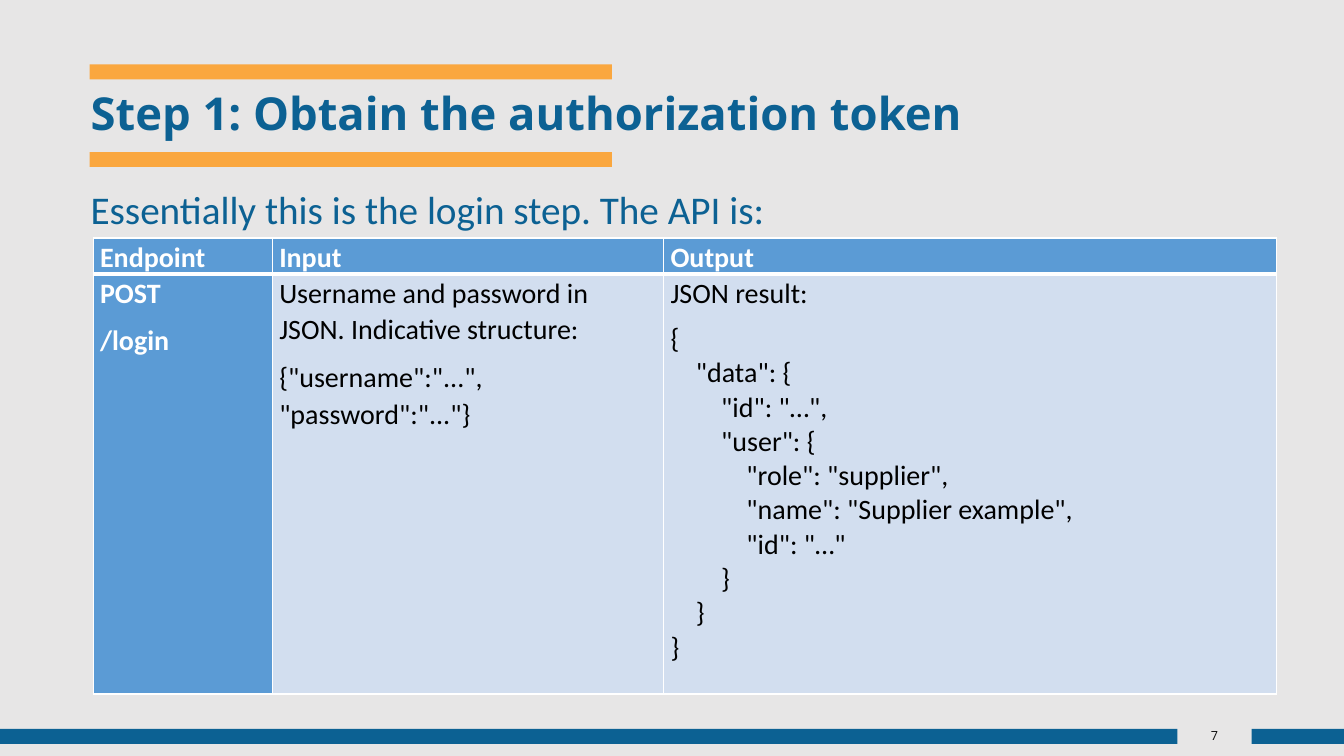
from dataclasses import dataclass

from lxml import etree
from pptx import Presentation
from pptx.dml.color import RGBColor
from pptx.enum.shapes import MSO_SHAPE
from pptx.enum.text import MSO_ANCHOR, PP_ALIGN
from pptx.oxml.ns import qn
from pptx.slide import Slide
from pptx.table import _Cell
from pptx.text.text import TextFrame, _Paragraph
from pptx.util import Pt

RECTANGLE = MSO_SHAPE.RECTANGLE
MIDDLE = MSO_ANCHOR.MIDDLE
TOP = MSO_ANCHOR.TOP
LEFT = PP_ALIGN.LEFT
CENTER = PP_ALIGN.CENTER


@dataclass(frozen=True)
class Theme:
    background: str = "E7E6E6"
    accent: str = "FAA73F"
    primary: str = "0C6193"
    header: str = "5B9BD5"
    body: str = "D2DEEF"
    white: str = "FFFFFF"
    black: str = "000000"
    number: str = "0D0D0D"
    heading_font: str = "Open Sans"
    text_font: str = "Calibri"
    title_size: float = 32.4
    intro_size: float = 28
    table_size: float = 20
    number_size: float = 9


@dataclass(frozen=True)
class Box:
    left: float
    top: float
    width: float
    height: float

    def lengths(self) -> tuple[Pt, Pt, Pt, Pt]:
        return Pt(self.left), Pt(self.top), Pt(self.width), Pt(self.height)


@dataclass(frozen=True)
class Style:
    font: str
    size: float
    color: str
    bold: bool = False


@dataclass(frozen=True)
class Bar:
    box: Box
    color: str


@dataclass(frozen=True)
class Line:
    text: str
    code: bool = False
    level: int = 0


@dataclass(frozen=True)
class CellContent:
    lines: tuple[Line, ...]
    emphasized: bool = False


THEME = Theme()
BAR_HEIGHT = 10.7
INDENT = 18.08

BARS = (
    Bar(Box(64, 46, 373, BAR_HEIGHT), THEME.accent),
    Bar(Box(64, 108.6, 373, BAR_HEIGHT), THEME.accent),
    Bar(Box(0, 520.6, 841, BAR_HEIGHT), THEME.primary),
    Bar(Box(894, 520.6, 66, BAR_HEIGHT), THEME.primary),
)

COLUMN_WIDTHS = (128, 279.5, 438)
ROW_HEIGHTS = (25, 300)
API_ROWS = (
    tuple(CellContent((Line(label),), True) for label in ("Endpoint", "Input", "Output")),
    (
        CellContent((Line("POST"), Line("/login")), True),
        CellContent((
            Line("Username and password in JSON. Indicative structure:"),
            Line('{"username":"...", "password":"..."}'),
        )),
        CellContent((
            Line("JSON result:"),
            Line("{", True),
            Line('"data": {', True, 1),
            Line('"id": "…",', True, 2),
            Line('"user": {', True, 2),
            Line('"role": "supplier",', True, 3),
            Line('"name": "Supplier example",', True, 3),
            Line('"id": "…"', True, 3),
            Line("}", True, 2),
            Line("}", True, 1),
            Line("}", True),
        )),
    ),
)


def rgb(color: str) -> RGBColor:
    return RGBColor.from_string(color)


def format_runs(paragraph: _Paragraph, style: Style) -> None:
    for run in paragraph.runs:
        run.font.name = style.font
        run.font.size = Pt(style.size)
        run.font.bold = style.bold
        run.font.color.rgb = rgb(style.color)


def write_line(frame: TextFrame, text: str, style: Style, align: PP_ALIGN) -> _Paragraph:
    frame.word_wrap = True
    frame.text = text
    paragraph = frame.paragraphs[0]
    paragraph.alignment = align
    format_runs(paragraph, style)
    return paragraph


def draw_bar(slide: Slide, bar: Bar) -> None:
    rectangle = slide.shapes.add_shape(RECTANGLE, *bar.box.lengths())
    rectangle.shadow.inherit = False
    rectangle.fill.solid()
    rectangle.fill.fore_color.rgb = rgb(bar.color)
    rectangle.line.fill.background()


def draw_title(slide: Slide, text: str, box: Box) -> None:
    title = slide.shapes.title
    title.left, title.top, title.width, title.height = box.lengths()
    title.text_frame.vertical_anchor = MIDDLE
    style = Style(THEME.heading_font, THEME.title_size, THEME.primary, True)
    write_line(title.text_frame, text, style, LEFT).line_spacing = 0.9


def draw_text(slide: Slide, text: str, box: Box, style: Style,
              align: PP_ALIGN, anchor: MSO_ANCHOR) -> None:
    frame = slide.shapes.add_textbox(*box.lengths()).text_frame
    frame.vertical_anchor = anchor
    write_line(frame, text, style, align)


def border_cell(cell: _Cell, bottom_width: float) -> None:
    properties = cell._tc.get_or_add_tcPr()
    for side, width in (("L", 1), ("R", 1), ("T", 1), ("B", bottom_width)):
        border = etree.SubElement(properties, qn(f"a:ln{side}"), w=str(Pt(width)))
        solid = etree.SubElement(border, qn("a:solidFill"))
        etree.SubElement(solid, qn("a:srgbClr"), val=THEME.white)


def fill_cell(cell: _Cell, content: CellContent, bottom_width: float) -> None:
    border_cell(cell, bottom_width)
    cell.fill.solid()
    cell.fill.fore_color.rgb = rgb(THEME.header if content.emphasized else THEME.body)
    cell.margin_left = cell.margin_right = Pt(5)
    cell.margin_top = cell.margin_bottom = Pt(0)
    color = THEME.white if content.emphasized else THEME.black
    style = Style(THEME.text_font, THEME.table_size, color, content.emphasized)
    cell.text_frame.text = "\n".join(line.text for line in content.lines)
    for paragraph, line in zip(cell.text_frame.paragraphs, content.lines):
        format_runs(paragraph, style)
        paragraph.line_spacing = 1.0 if line.code else 1.07
        paragraph.space_after = Pt(0 if line.code else 8)
        if line.level:
            paragraph._p.get_or_add_pPr().set("marL", str(Pt(INDENT * line.level)))


def draw_api_table(slide: Slide, left: float, top: float) -> None:
    box = Box(left, top, sum(COLUMN_WIDTHS), sum(ROW_HEIGHTS))
    table = slide.shapes.add_table(len(ROW_HEIGHTS), len(COLUMN_WIDTHS), *box.lengths()).table
    for column, width in zip(table.columns, COLUMN_WIDTHS):
        column.width = Pt(width)
    for row_index, (row, height) in enumerate(zip(table.rows, ROW_HEIGHTS)):
        row.height = Pt(height)
        for cell, content in zip(row.cells, API_ROWS[row_index]):
            fill_cell(cell, content, 3 if row_index == 0 else 1)


def main() -> None:
    deck = Presentation()
    deck.slide_width, deck.slide_height = Pt(960), Pt(540)
    slide = deck.slides.add_slide(deck.slide_layouts[5])
    slide.background.fill.solid()
    slide.background.fill.fore_color.rgb = rgb(THEME.background)
    for bar in BARS:
        draw_bar(slide, bar)
    draw_text(slide, "7", Box(841, 515, 53, 21),
              Style(THEME.heading_font, THEME.number_size, THEME.number), CENTER, MIDDLE)
    draw_title(slide, "Step 1: Obtain the authorization token", Box(57.6, 63.4, 703.4, 38))
    draw_text(slide, "Essentially this is the login step. The API is:", Box(57.6, 129, 854.6, 41),
              Style(THEME.text_font, THEME.intro_size, THEME.primary), LEFT, TOP)
    draw_api_table(slide, 66.5, 170)
    deck.save("out.pptx")


if __name__ == "__main__":
    main()
